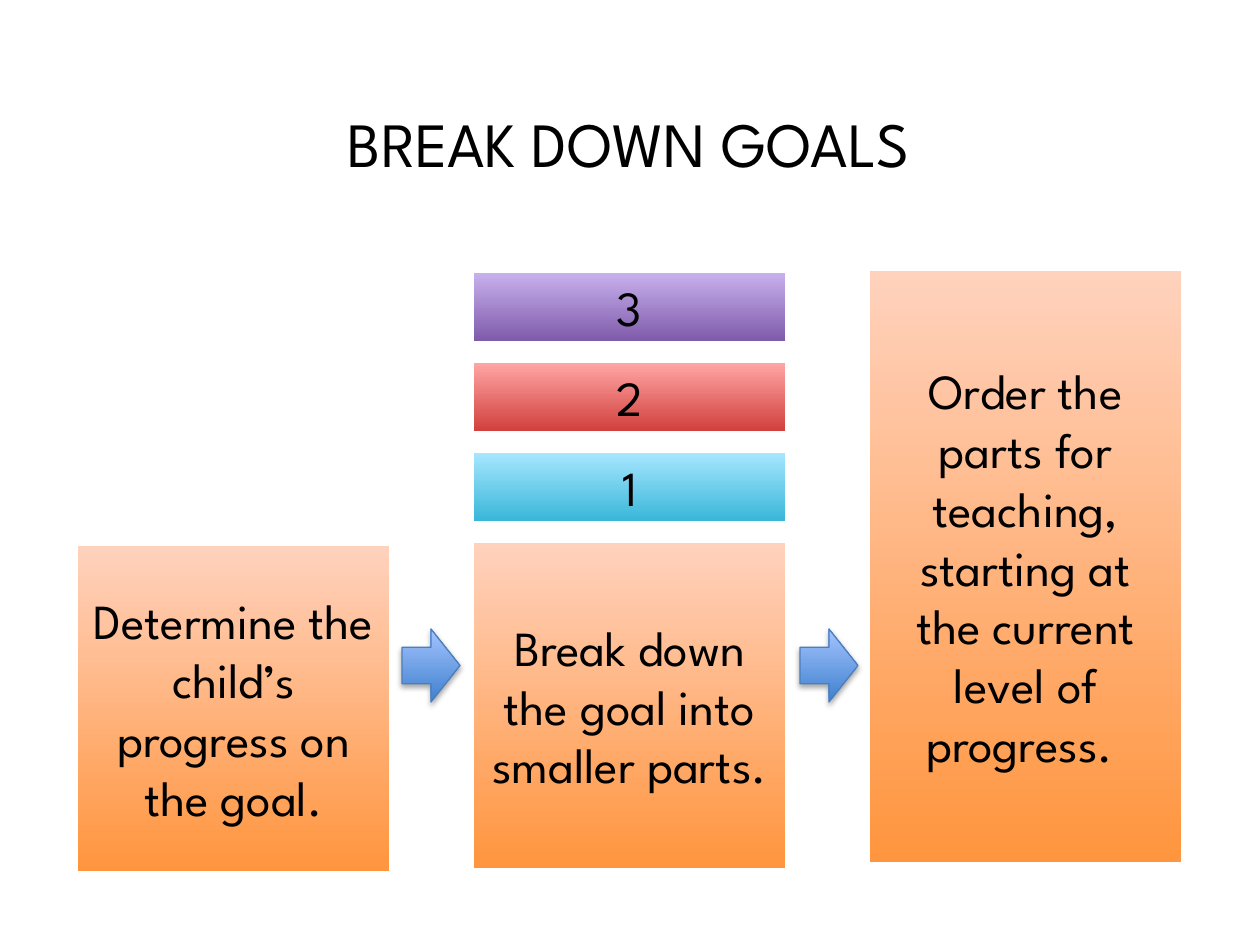
"""Build the BREAK DOWN GOALS slide: three steps joined by arrows, with numbered parts."""
from lxml import etree
from pptx import Presentation
from pptx.dml.color import RGBColor
from pptx.enum.shapes import MSO_SHAPE as SHAPE
from pptx.enum.text import MSO_ANCHOR as ANCHOR, PP_ALIGN as ALIGN
from pptx.oxml import parse_xml
from pptx.oxml.ns import nsdecls
from pptx.util import Pt

PX = 914400 / 126
FONT = "League Spartan"
COL, PITCH, WIDTH = 78, 396, 311
SHADOW = (
    f'<a:effectLst {nsdecls("a")}>'
    '<a:outerShdw blurRad="40000" dist="23000" dir="5400000" rotWithShape="0">'
    '<a:srgbClr val="000000"><a:alpha val="35000"/></a:srgbClr>'
    '</a:outerShdw></a:effectLst>'
)


def write(sp, text, size):
    tf = sp.text_frame
    tf.word_wrap = True
    tf.vertical_anchor = ANCHOR.MIDDLE
    p = tf.paragraphs[0]
    p.text = text
    p.alignment = ALIGN.CENTER
    p.font.name = FONT
    p.font.size = Pt(size)
    p.font.color.rgb = RGBColor.from_string("000000")


def add_block(kind, box, low, high):
    sp = s.shapes.add_shape(kind, *[int(v * PX) for v in box])
    sp.shadow.inherit = False
    sp.fill.gradient()
    sp.fill.gradient_angle = 90
    for stop, color in zip(sp.fill.gradient_stops, (low, high)):
        stop.color.rgb = RGBColor.from_string(color)
    sp.line.fill.background()
    return sp


prs = Presentation()
prs.slide_width, prs.slide_height = int(1260 * PX), int(945 * PX)
s = prs.slides.add_slide(prs.slide_layouts[6])

title = s.shapes.add_textbox(*[int(v * PX) for v in (45, 63, 1168, 158)])
write(title, "BREAK DOWN GOALS", 36)

steps = [
    ("Determine the child’s progress on the goal.", 546, 325),
    ("Break down the goal into smaller parts.", 543, 325),
    ("Order the parts for teaching, starting at the current level of progress. ", 271, 591),
]
for i, (text, top, height) in enumerate(steps):
    box = (COL + i * PITCH, top, WIDTH, height)
    write(add_block(SHAPE.RECTANGLE, box, "FF953E", "FFD2BD"), text, 28)

parts = [("1", "39B7D8", "A7E6FF"), ("2", "D1403C", "FFA6A5"), ("3", "7F5BAB", "C8B0ED")]
for i, (text, low, high) in enumerate(parts):
    box = (COL + PITCH, 453 - i * 90, WIDTH, 68)
    write(add_block(SHAPE.RECTANGLE, box, low, high), text, 28)

for left in (402, 800):
    sp = add_block(SHAPE.RIGHT_ARROW, (left, 629, 58, 73), "3F80CE", "A4C4FF")
    sp.line.color.rgb = RGBColor.from_string("4B7EBC")
    sp.line.width = Pt(0.75)
    spPr = sp._element.spPr
    spPr.replace(spPr.find("{*}effectLst"), parse_xml(SHADOW))

prs.save("out.pptx")
